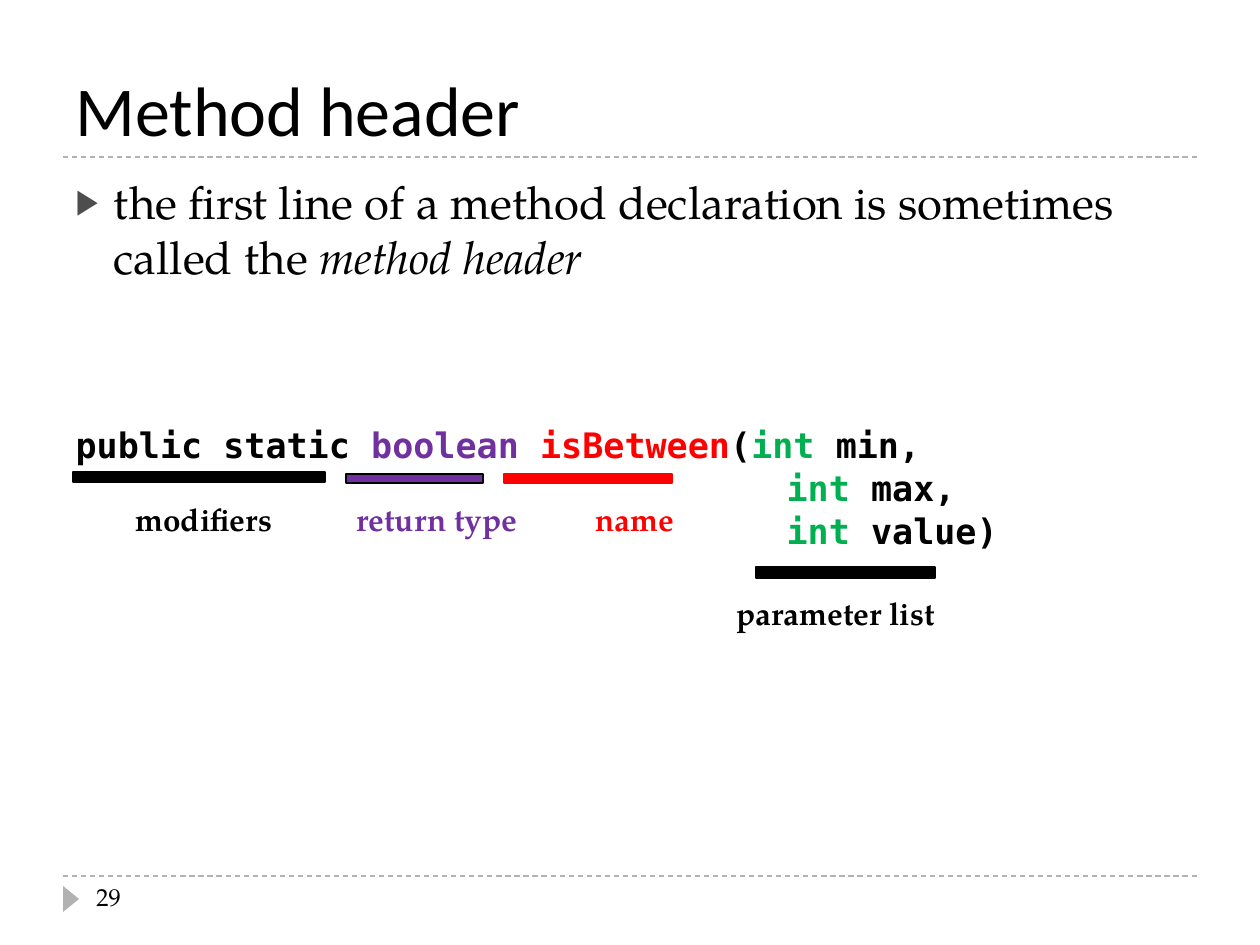
from dataclasses import dataclass
from typing import NamedTuple

from lxml.etree import SubElement
from pptx import Presentation
from pptx.dml.color import RGBColor
from pptx.enum.dml import MSO_LINE
from pptx.enum.shapes import MSO_CONNECTOR, MSO_SHAPE
from pptx.enum.text import MSO_ANCHOR, MSO_AUTO_SIZE, PP_ALIGN
from pptx.oxml.ns import qn
from pptx.util import Emu, Pt

EMU_PER_PX = 914400 / 126
COLORS = {
    "black": "000000", "purple": "7030A0", "red": "FF0000",
    "green": "00B050", "bullet": "4D4D4D", "rule": "B2B2B2",
}
SANS, SERIF, MONO = "Calibri", "TeX Gyre Pagella", "DejaVu Sans Mono"
INDENT = 38
CODE_INDENT = 711


class Box(NamedTuple):
    x: int
    y: int
    w: int
    h: int


@dataclass
class HeaderPart:
    """A part of the method header: its underline and its label."""
    text: str
    color: str
    outline: str
    bar: Box
    label: Box


PARTS = [
    HeaderPart("modifiers", "black", "black", Box(73, 472, 252, 10), Box(123, 494, 173, 50)),
    HeaderPart("return type", "purple", "black", Box(346, 474, 137, 9), Box(344, 494, 194, 50)),
    HeaderPart("name", "red", "red", Box(504, 474, 168, 9), Box(583, 494, 110, 50)),
    HeaderPart("parameter list", "black", "black", Box(756, 567, 179, 11), Box(724, 588, 237, 50)),
]
CODE_LINES = [
    [("public static ", "black"), ("boolean ", "purple"), ("isBetween", "red"),
     ("(", "black"), ("int ", "green"), ("min,", "black")],
    [("int ", "green"), ("max,", "black")],
    [("int ", "green"), ("value)", "black")],
]


def px(n: int) -> Emu:
    return Emu(round(n * EMU_PER_PX))


def rgb(name: str) -> RGBColor:
    return RGBColor.from_string(COLORS[name])


def place(sp, box: Box) -> None:
    sp.left, sp.top, sp.width, sp.height = map(px, box)


def add_run(p, text: str, color: str = "black", **font) -> None:
    r = p.add_run()
    r.text = text
    r.font.color.rgb = rgb(color)
    for name, value in font.items():
        setattr(r.font, name, value)


def format_paragraph(p, before: float, left: int = 0, bullet: bool = False) -> None:
    p.space_before = Pt(before)
    pPr = p._p.get_or_add_pPr()
    pPr.set("marL", str(px(left)))
    pPr.set("indent", str(-px(left) if bullet else 0))
    if not bullet:
        SubElement(pPr, qn("a:buNone"))
        return
    clr = SubElement(pPr, qn("a:buClr"))
    SubElement(clr, qn("a:srgbClr"), val=COLORS["bullet"])
    SubElement(pPr, qn("a:buSzPct"), val="76000")
    SubElement(pPr, qn("a:buChar"), char="▶")


def add_text(slide, box: Box, text: str, color: str, wrap: bool, **font) -> None:
    sp = slide.shapes.add_textbox(*map(px, box))
    tf = sp.text_frame
    tf.word_wrap = wrap
    tf.auto_size = MSO_AUTO_SIZE.NONE if wrap else MSO_AUTO_SIZE.SHAPE_TO_FIT_TEXT
    add_run(tf.paragraphs[0], text, color, **font)


def add_solid(slide, kind: MSO_SHAPE, box: Box, fill: str, outline: str | None = None):
    sp = slide.shapes.add_shape(kind, *map(px, box))
    sp.shadow.inherit = False
    sp.fill.solid()
    sp.fill.fore_color.rgb = rgb(fill)
    if outline:
        sp.line.color.rgb = rgb(outline)
        sp.line.width = Pt(1.5)
    else:
        sp.line.fill.background()
    return sp


def add_rule(slide, y: int) -> None:
    """Draw a dashed line across the slide."""
    line = slide.shapes.add_connector(MSO_CONNECTOR.STRAIGHT, px(63), px(y), px(1197), px(y))
    line.line.color.rgb = rgb("rule")
    line.line.width = Pt(0.75)
    line.line.dash_style = MSO_LINE.DASH
    SubElement(line._element.spPr, qn("a:effectLst"))


def fill_title(sp) -> None:
    place(sp, Box(63, 21, 1134, 136))
    tf = sp.text_frame
    tf.auto_size = MSO_AUTO_SIZE.NONE
    tf.vertical_anchor = MSO_ANCHOR.BOTTOM
    p = tf.paragraphs[0]
    p.alignment = PP_ALIGN.LEFT
    add_run(p, "Method header", size=Pt(40), name=SANS)


def fill_body(sp) -> None:
    place(sp, Box(63, 168, 1134, 680))
    tf = sp.text_frame
    tf.auto_size = MSO_AUTO_SIZE.NONE
    p = tf.paragraphs[0]
    format_paragraph(p, 6, INDENT, bullet=True)
    font = {"size": Pt(26), "name": SERIF}
    add_run(p, "the first line of a method declaration is sometimes called the ", **font)
    add_run(p, "method header", italic=True, **font)
    for i, line in enumerate(CODE_LINES):
        p = tf.add_paragraph()
        if i == 0:
            format_paragraph(p, 80)
        else:
            format_paragraph(p, 0.7, CODE_INDENT)
        for text, color in line:
            add_run(p, text, color, size=Pt(20), name=MONO, bold=True)


def main() -> None:
    prs = Presentation()
    prs.slide_width, prs.slide_height = px(1260), px(945)
    slide = prs.slides.add_slide(prs.slide_layouts[1])
    fill_title(slide.shapes.title)
    fill_body(slide.placeholders[1])
    for y in (876, 157):
        add_rule(slide, y)
    marker = add_solid(slide, MSO_SHAPE.ISOSCELES_TRIANGLE, Box(58, 891, 26, 16), "rule")
    marker.rotation = 90
    add_text(slide, Box(84, 876, 273, 50), "29", "black", True, size=Pt(14), name=SERIF)
    for part in PARTS:
        add_solid(slide, MSO_SHAPE.RECTANGLE, part.bar, part.color, part.outline)
        add_text(slide, part.label, part.text, part.color, False,
                 size=Pt(18), name=SERIF, bold=True)
    prs.save("out.pptx")


if __name__ == "__main__":
    main()
